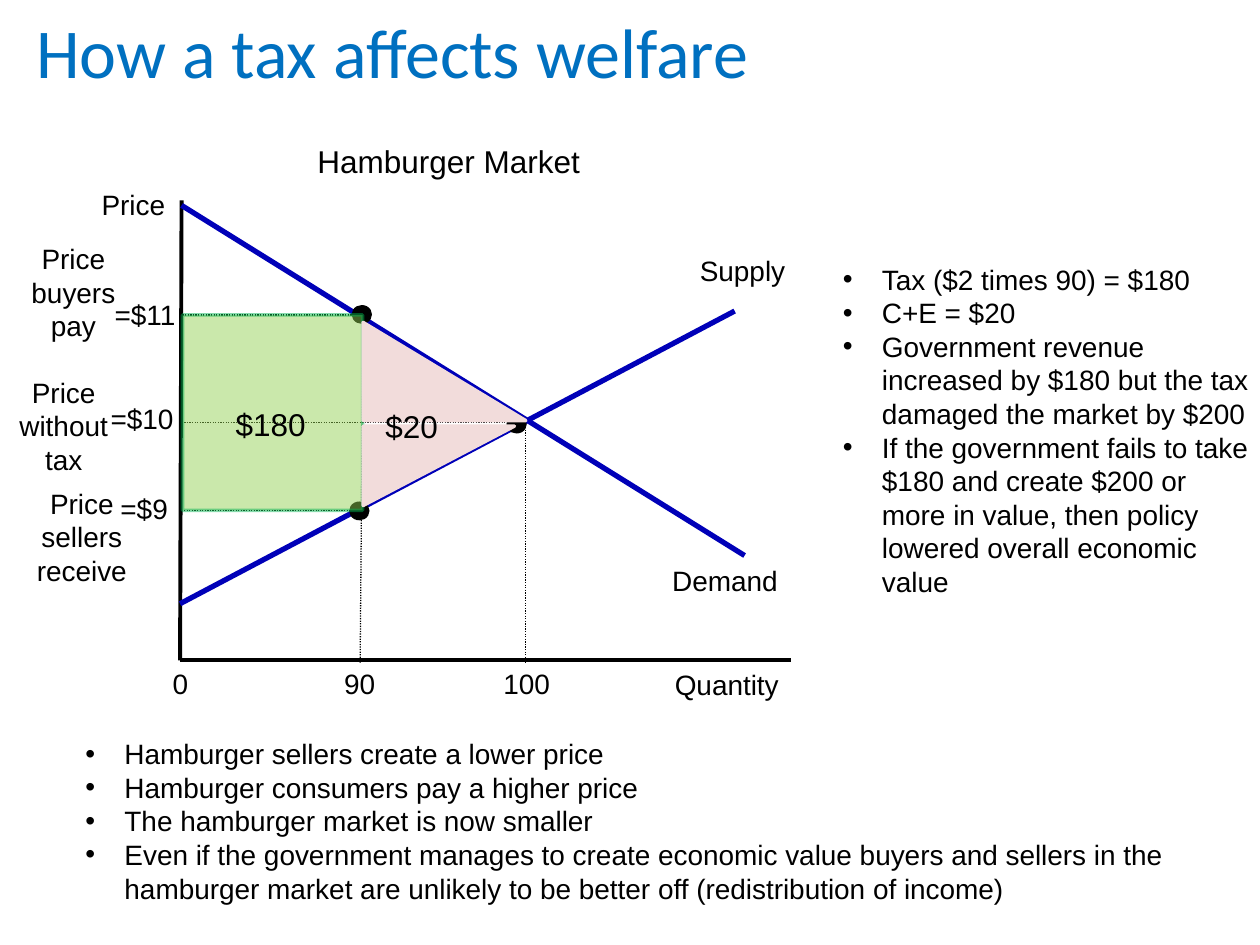
from lxml import etree
from pptx import Presentation
from pptx import util as u
from pptx.dml.color import RGBColor
from pptx.enum import dml, shapes, text
from pptx.oxml.ns import qn

COLOURS = {
    "title": "0070C0", "ink": "000000", "paper": "FFFFFF", "curve": "0000B8",
    "revenue": "92D050", "revenue_edge": "00B050", "loss": "F2DCDB",
}
LEFT, CENTER, RIGHT = (text.PP_ALIGN.LEFT, text.PP_ALIGN.CENTER,
                       text.PP_ALIGN.RIGHT)
LABEL_HEIGHT = 0.94


def rgb(name):
    return RGBColor.from_string(COLOURS[name])


def set_opacity(paint, percent):
    """Make the solid colour of a fill partly transparent."""
    colour = paint._xPr.find(qn("a:solidFill"))[0]
    etree.SubElement(colour, qn("a:alpha"), val=str(percent * 1000))


class MarketSlide:
    """Style and current slide; all lengths are in centimetres."""

    font = "Arial"
    label_size = 16
    heading_size = 18
    bullet_indent = u.Cm(0.79)

    def __init__(self, prs):
        self.slide = prs.slides.add_slide(prs.slide_layouts[5])

    def style_runs(self, paragraph, size, font, colour):
        for run in paragraph.runs:
            run.font.size = u.Pt(size)
            run.font.name = font
            run.font.color.rgb = rgb(colour)

    def title(self, words, left, top, width, height):
        title = self.slide.shapes.title
        title.left, title.top = u.Cm(left), u.Cm(top)
        title.width, title.height = u.Cm(width), u.Cm(height)
        frame = title.text_frame
        frame.text = words
        frame.auto_size = text.MSO_AUTO_SIZE.NONE
        frame.vertical_anchor = text.MSO_ANCHOR.TOP
        frame.paragraphs[0].alignment = LEFT
        self.style_runs(frame.paragraphs[0], 40, "Calibri", "title")

    def label(self, words, left, top, width, height=LABEL_HEIGHT,
              align=LEFT, size=label_size, wrap=False):
        box = self.slide.shapes.add_textbox(
            u.Cm(left), u.Cm(top), u.Cm(width), u.Cm(height))
        frame = box.text_frame
        frame.text = words
        frame.word_wrap = wrap
        frame.auto_size = text.MSO_AUTO_SIZE.SHAPE_TO_FIT_TEXT
        for paragraph in frame.paragraphs:
            paragraph.alignment = align
            self.style_runs(paragraph, size, self.font, "ink")
        return frame

    def bullets(self, points, left, top, width, height):
        frame = self.label("\n".join(points), left, top, width, height,
                           wrap=True)
        for paragraph in frame.paragraphs:
            properties = paragraph._p.get_or_add_pPr()
            properties.set("marL", str(self.bullet_indent))
            properties.set("indent", str(-self.bullet_indent))
            etree.SubElement(properties, qn("a:buFont"), typeface=self.font)
            etree.SubElement(properties, qn("a:buChar"), char="•")

    def line(self, start, end, colour="ink", width=2.25, dotted=False):
        line = self.slide.shapes.add_connector(
            shapes.MSO_CONNECTOR.STRAIGHT,
            *(u.Cm(value) for value in (*start, *end)))
        line.line.color.rgb = rgb(colour)
        line.line.width = u.Pt(width)
        if dotted:
            line.line.dash_style = dml.MSO_LINE.ROUND_DOT
        etree.SubElement(line._element.spPr, qn("a:effectLst"))

    def guide(self, start, end):
        self.line(start, end, width=0.75, dotted=True)

    def area(self, kind, left, top, width, height, fill, edge=None,
             opacity=None):
        area = self.slide.shapes.add_shape(
            kind, u.Cm(left), u.Cm(top), u.Cm(width), u.Cm(height))
        area.shadow.inherit = False
        area.fill.solid()
        area.fill.fore_color.rgb = rgb(fill)
        area.line.color.rgb = rgb(edge or fill)
        area.line.width = u.Pt(2)
        if opacity:
            set_opacity(area.fill, opacity)
            set_opacity(area.line.fill, opacity)
        return area

    def point(self, left, top):
        dot = self.area(shapes.MSO_SHAPE.OVAL, left, top, 0.41, 0.38, "ink")
        dot.line.fill.background()


def build():
    prs = Presentation()
    prs.slide_width, prs.slide_height = u.Cm(25.4), u.Cm(19.05)
    market = MarketSlide(prs)
    rectangle = shapes.MSO_SHAPE.RECTANGLE
    triangle = shapes.MSO_SHAPE.ISOSCELES_TRIANGLE

    market.title("How a tax affects welfare", 0.48, 0.05, 24.92, 1.47)

    # Axes
    origin = (3.63, 13.31)
    market.area(rectangle, 3.68, 4.09, 12.29, 9.17, "paper")
    market.line((3.66, 4.04), origin)
    market.label("Price", 1.52, 3.66, 2.06, align=RIGHT, wrap=True)
    market.line(origin, (15.95, 13.31))
    market.label("Quantity", 12.5, 13.34, 3.45, align=RIGHT, wrap=True)
    market.label("0", 3.23, 13.31, 0.84)

    # Curves
    market.line((3.66, 4.14), (15.01, 11.2), "curve", 3)
    market.label("Demand", 13.28, 11.23, 2.67, align=CENTER)
    market.line((3.63, 12.17), (14.81, 6.27), "curve", 3)
    market.label("Supply", 13.84, 4.98, 2.26, align=CENTER)

    market.bullets([
        "Tax ($2 times 90) = $180",
        "C+E = $20",
        "Government revenue increased by $180 but the tax damaged the "
        "market by $200",
        "If the government fails to take $180 and create $200 or more in "
        "value, then policy lowered overall economic value",
    ], 16.74, 5.16, 8.7, 7.77)

    # Quantities
    for quantity, start, end, left, width in [
        ("100", (10.59, 8.56), (10.59, 13.36), 9.88, 1.47),
        ("90", (7.32, 6.27), (7.26, 13.36), 6.68, 1.14),
    ]:
        market.guide(start, end)
        market.label(quantity, left, 13.31, width, align=CENTER)

    # Prices: point, guide line, name and value
    for point, start, end, name, name_at, value, value_at in [
        ((7.04, 10.11), (3.71, 10.29), (7.32, 10.29),
         "Price\nsellers\nreceive", (0.48, 9.68, 2.34), "=$9",
         (2.18, 9.78, 1.47)),
        ((10.21, 8.36), (3.61, 8.51), (10.31, 8.51),
         "Price\nwithout\ntax", (0.13, 7.44, 2.31), "=$10",
         (1.98, 7.98, 1.8)),
        ((7.09, 6.15), (3.68, 6.35), (7.32, 6.35),
         "Price\nbuyers\npay", (0.36, 4.75, 2.24), "=$11",
         (2.06, 5.87, 1.75)),
    ]:
        market.point(*point)
        market.guide(start, end)
        market.label(name, *name_at, 2.31, align=CENTER)
        market.label(value, *value_at)

    # Tax revenue and the loss in welfare
    market.area(rectangle, 3.68, 6.35, 3.63, 3.94, "revenue",
                "revenue_edge", opacity=48)
    market.label("$180", 4.5, 8.05, 1.93, 1.02, size=market.heading_size)
    buyers_loss = market.area(triangle, 7.32, 6.5, 3.28, 1.98, "loss")
    buyers_loss.adjustments[0] = 0
    sellers_loss = market.area(triangle, 7.32, 8.59, 3.05, 1.6, "loss")
    sellers_loss.adjustments[0] = 1
    sellers_loss.rotation = 180
    market.label("$20", 7.52, 8.08, 1.57, 1.02, size=market.heading_size)

    market.bullets([
        "Hamburger sellers create a lower price",
        "Hamburger consumers pay a higher price",
        "The hamburger market is now smaller",
        "Even if the government manages to create economic value buyers and "
        "sellers in the hamburger market are unlikely to be better off "
        "(redistribution of income)",
    ], 1.47, 14.73, 23.24, 3.68)
    market.label("Hamburger Market", 6.15, 2.74, 8.48, 1.02,
                 size=market.heading_size, wrap=True)

    prs.save("out.pptx")


if __name__ == "__main__":
    build()
